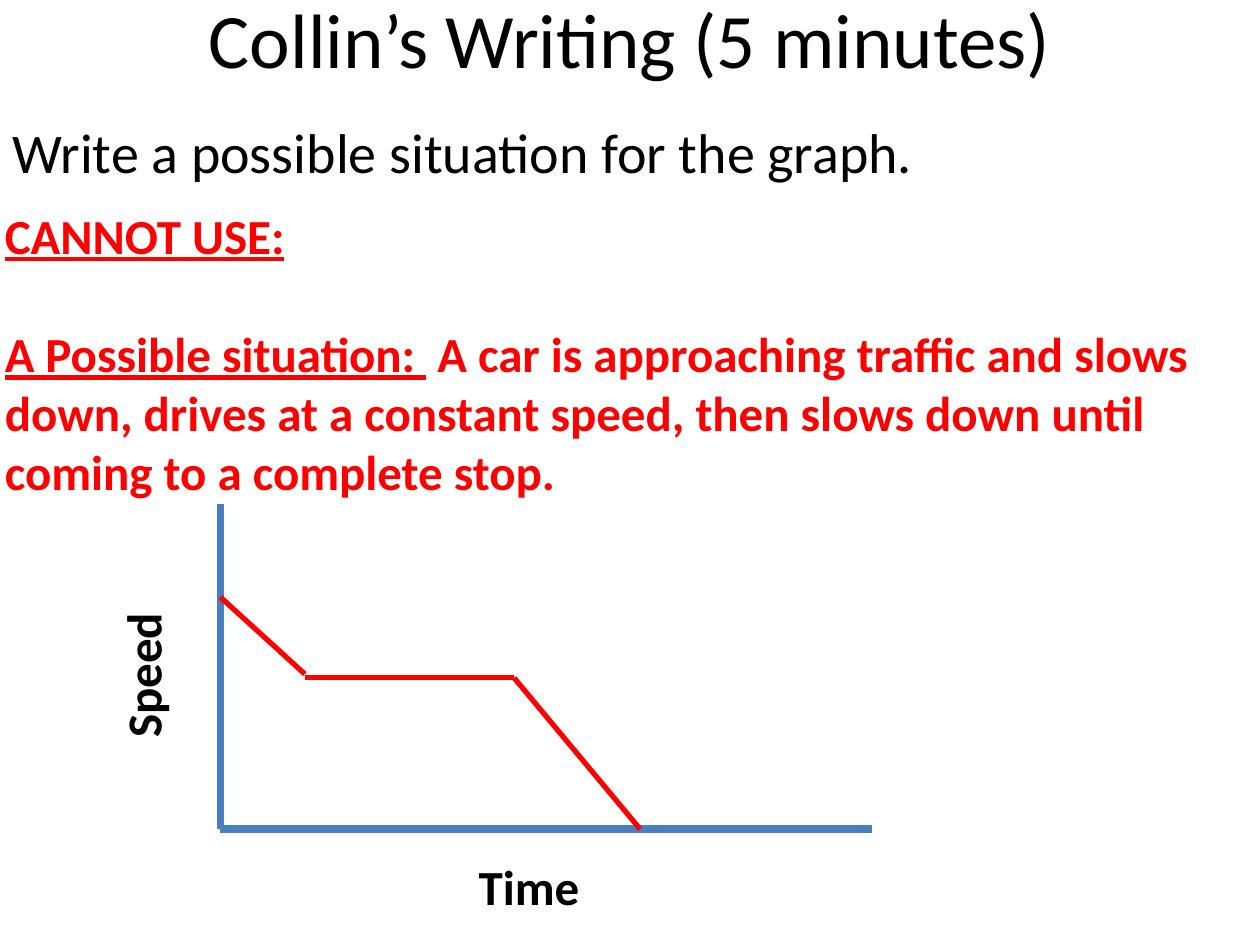
from lxml import etree
from pptx import Presentation
from pptx import util as u
from pptx.dml.color import RGBColor
from pptx.enum import shapes, text
from pptx.oxml.ns import qn

COLUMNS, ROWS = 100, 75  # grid cells of 0.1 inch


def color(value):
    return RGBColor.from_string(value)


class Sheet:
    font = "Calibri"
    black, red, blue = "000000", "FF0000", "4B7EBC"

    def __init__(self, deck):
        self.page = deck.slides.add_slide(deck.slide_layouts[6])
        self.column = deck.slide_width / COLUMNS
        self.row = deck.slide_height / ROWS

    def place(self, column, row):
        return u.Emu(round(column * self.column)), u.Emu(round(row * self.row))

    def add_words(self, at, size, paragraphs, ink=black, bold=False, wrap=True,
                  align=text.PP_ALIGN.LEFT, anchor=text.MSO_ANCHOR.TOP, gap=0):
        """Each paragraph is a list of (wording, underlined) spans."""
        box = self.page.shapes.add_textbox(*self.place(*at[:2]), *self.place(*at[2:]))
        frame = box.text_frame
        frame.word_wrap = wrap
        frame.vertical_anchor = anchor
        for index, spans in enumerate(paragraphs):
            para = frame.add_paragraph() if index else frame.paragraphs[0]
            para.alignment = align
            if index:
                para.space_before = u.Pt(gap)
            for wording, underlined in spans:
                span = para.add_run()
                span.text = wording
                span.font.name = self.font
                span.font.size = u.Pt(size)
                span.font.bold = bold
                span.font.underline = underlined
                span.font.color.rgb = color(ink)
        return box

    def add_line(self, start, end, ink, width):
        stroke = self.page.shapes.add_connector(
            shapes.MSO_CONNECTOR.STRAIGHT, *self.place(*start), *self.place(*end))
        stroke.line.color.rgb = color(ink)
        stroke.line.width = u.Pt(width)
        etree.SubElement(stroke._element.spPr, qn("a:effectLst"))


def main():
    deck = Presentation()
    deck.slide_width, deck.slide_height = u.Inches(10), u.Inches(7.5)
    sheet = Sheet(deck)

    # Heading and task
    sheet.add_words((5, -3.3, 90, 12.5), 44, [[("Collin’s Writing (5 minutes)", False)]],
                    align=text.PP_ALIGN.CENTER, anchor=text.MSO_ANCHOR.MIDDLE)
    sheet.add_words((0, 8.8, 100, 59.5), 32,
                    [[("Write a possible situation for the graph.", False)]])

    # Axes and their labels
    origin = (17.5, 65.8)
    for tip in ((17.5, 40), (69.2, 65.8)):
        sheet.add_line(tip, origin, sheet.blue, 4.5)
    sheet.add_words((37, 67.5, 10.1, 5.7), 28, [[("Time", False)]], bold=True, wrap=False)
    speed = sheet.add_words((5.3, 50.7, 12, 5.7), 28, [[("Speed", False)]],
                            bold=True, wrap=False)
    speed.rotation = 270

    # Speed over time
    for start, end in (((17.5, 47.4), (24.2, 53.5)),
                       ((24.2, 53.8), (40.8, 53.8)),
                       ((40.8, 53.8), (50.8, 65.8))):
        sheet.add_line(start, end, sheet.red, 3)

    # Sample answer
    sheet.add_words((-0.6, 15.8, 100, 24.6), 28, [
        [("CANNOT USE:", True)],
        [("A Possible situation: ", True),
         (" A car is approaching traffic and slows down, drives at a constant speed, "
          "then slows down until coming to a complete stop.", False)],
    ], ink=sheet.red, bold=True, gap=34)

    deck.save("out.pptx")


if __name__ == "__main__":
    main()
